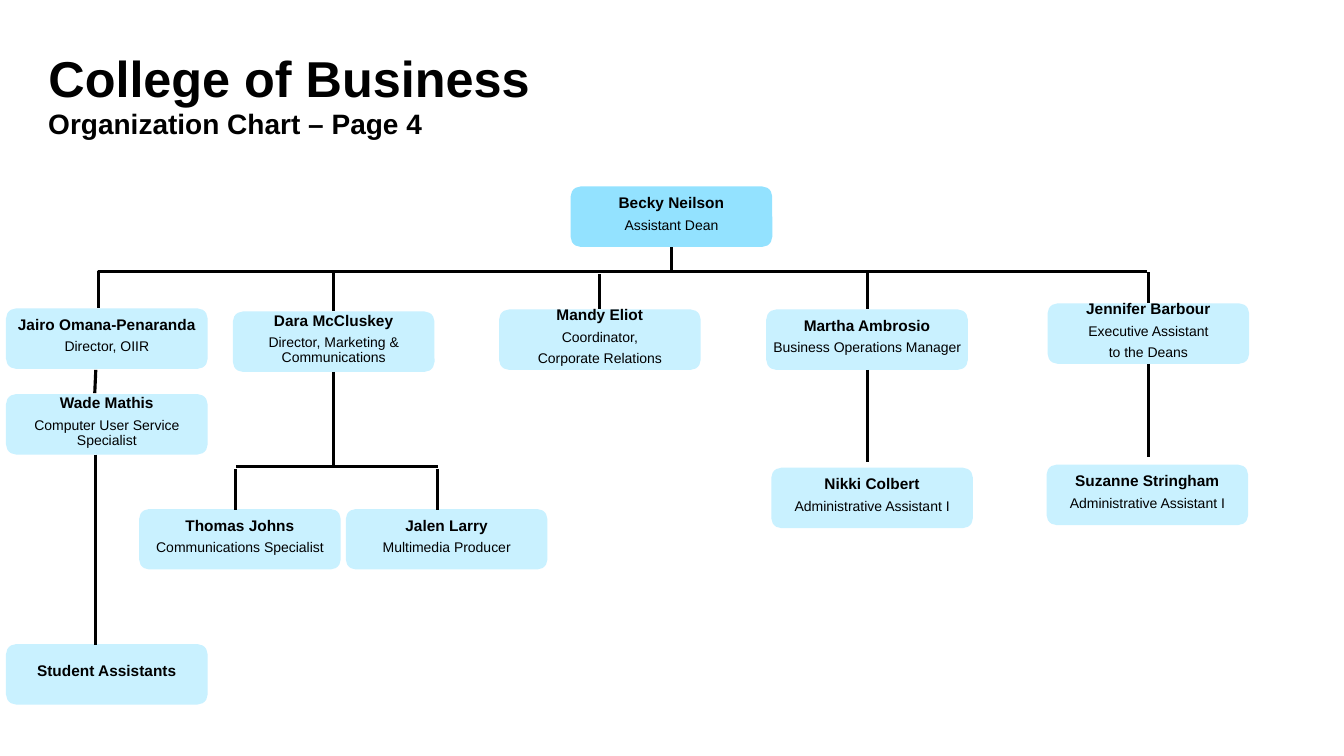
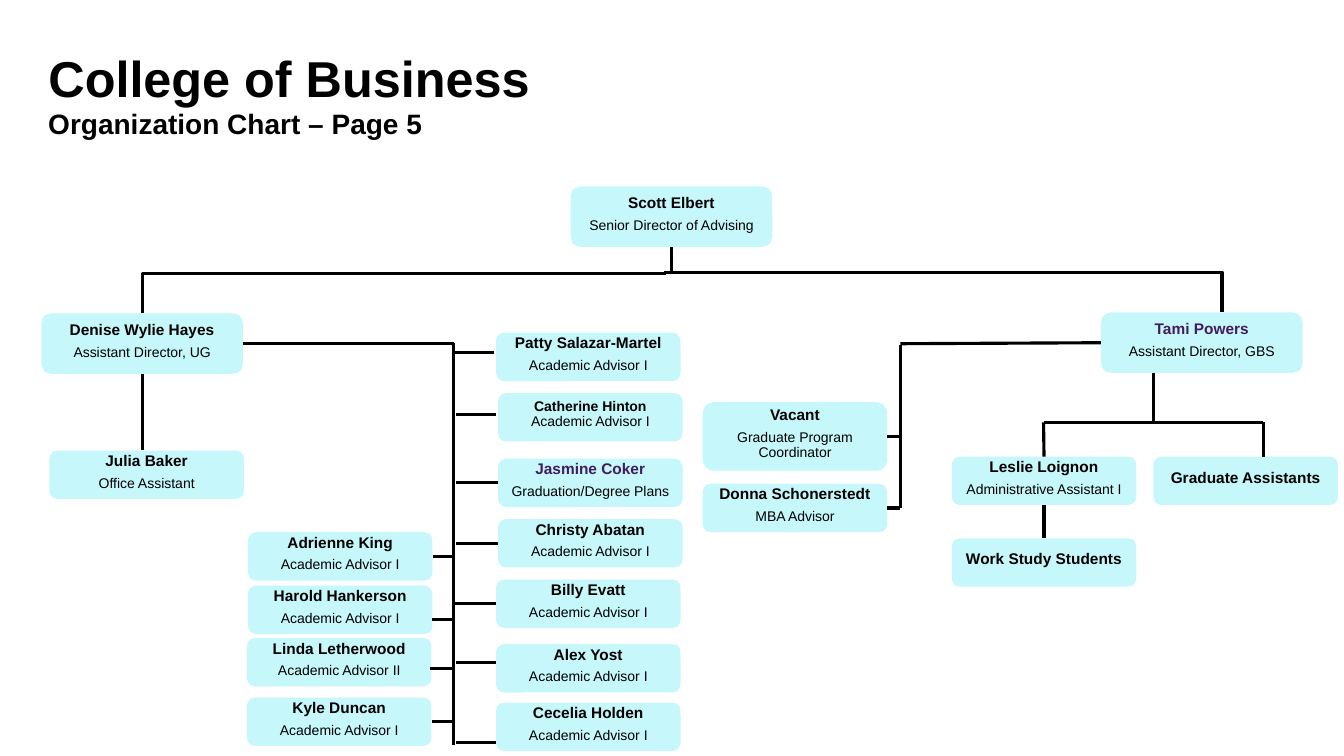
from lxml import etree
from pptx import Presentation
from pptx.dml.color import RGBColor as RGB
from pptx.enum.shapes import MSO_CONNECTOR as CXN, MSO_SHAPE as SHAPE
from pptx.enum.text import MSO_ANCHOR as ANCHOR, MSO_AUTO_SIZE as FIT, PP_ALIGN as ALIGN
from pptx.oxml.ns import qn
from pptx.util import Inches, Pt


class Theme:
    font = "Arial"
    ink, accent = RGB(0, 0, 0), RGB(0x42, 0x1C, 0x5E)
    head, staff, advising = RGB(0x93, 0xE2, 0xFF), RGB(0xC9, 0xF1, 0xFF), RGB(0xC5, 0xF7, 0xFB)
    title, subtitle, name, role = Pt(36), Pt(20), Pt(11), Pt(10)
    line = Pt(2.25)


# Box sizes and connection sites
WIDE, SMALL, TALL = (2, 0.6), (1.83, 0.48), (1.83, 0.68)
TOP, LEFT, BOTTOM, RIGHT = range(4)
ADVISOR = "Academic Advisor I"

# Boxes: name, role, left, top, size, fill. A role's line ends start paragraphs.
dean_boxes = [("Becky Neilson", "Assistant Dean", 5.66, 1.85, WIDE, Theme.head)]
dean_boxes += [(*box, WIDE, Theme.staff) for box in [
    ("Jairo Omana-Penaranda", "Director, OIIR", 0.06, 3.06),
    ("Dara McCluskey", "Director, Marketing & Communications", 2.31, 3.09),
    ("Mandy Eliot", "Coordinator,\nCorporate Relations", 4.95, 3.07),
    ("Martha Ambrosio", "Business Operations Manager", 7.6, 3.07),
    ("Jennifer Barbour", "Executive Assistant\nto the Deans", 10.39, 3.01),
    ("Wade Mathis", "Computer User Service Specialist", 0.06, 3.91),
    ("Thomas Johns", "Communications Specialist", 1.38, 5.05),
    ("Jalen Larry", "Multimedia Producer", 3.43, 5.05),
    ("Nikki Colbert", "Administrative Assistant I", 7.65, 4.64),
    ("Suzanne Stringham", "Administrative Assistant I", 10.38, 4.61),
    ("Student Assistants", "", 0.06, 6.39),
]]
advising_boxes = [(*box, Theme.advising) for box in [
    ("Scott Elbert", "Senior Director of Advising", 5.66, 1.85, WIDE),
    ("Denise Wylie Hayes", "Assistant Director, UG", 0.41, 3.11, WIDE),
    ("Tami Powers", "Assistant Director, GBS", 10.92, 3.1, WIDE),
    ("Julia Baker", "Office Assistant", 0.49, 4.47, (1.93, 0.48)),
    ("Patty Salazar-Martel", ADVISOR, 4.92, 3.3, SMALL),
    ("Catherine Hinton", ADVISOR, 4.94, 3.9, SMALL),
    ("Jasmine Coker", "Graduation/Degree Plans", 4.94, 4.55, SMALL),
    ("Christy Abatan", ADVISOR, 4.94, 5.15, SMALL),
    ("Billy Evatt", ADVISOR, 4.92, 5.75, SMALL),
    ("Alex Yost", ADVISOR, 4.92, 6.39, SMALL),
    ("Cecelia Holden", ADVISOR, 4.92, 6.97, SMALL),
    ("Adrienne King", ADVISOR, 2.46, 5.28, SMALL),
    ("Harold Hankerson", ADVISOR, 2.46, 5.81, SMALL),
    ("Linda Letherwood", "Academic Advisor II", 2.45, 6.33, SMALL),
    ("Kyle Duncan", ADVISOR, 2.45, 6.92, SMALL),
    ("Vacant", "Graduate Program Coordinator", 6.97, 3.99, TALL),
    ("Donna Schonerstedt", "MBA Advisor", 6.97, 4.8, SMALL),
    ("Leslie Loignon", "Administrative Assistant I", 9.44, 4.53, SMALL),
    ("Graduate Assistants", "", 11.44, 4.53, SMALL),
    ("Work Study Students", "", 9.44, 5.34, SMALL),
]]
accented = {"Tami Powers", "Jasmine Coker"}
one_paragraph = {"Catherine Hinton"}

# Elbows run sideways first, then down
dean_elbows = [((11.38, 2.69), (0.98, 3.06))]
advising_elbows = [((6.61, 2.71), (1.41, 3.11)), ((6.59, 2.7), (12.12, 3.1))]

# Straight lines: an end is a point, or a box name with a side
dean_lines = [
    ((6.66, 2.69), ("Becky Neilson", BOTTOM)),
    ((3.31, 2.69), ("Dara McCluskey", TOP)),
    ((5.95, 2.72), ("Mandy Eliot", TOP)),
    ((8.6, 2.7), ("Martha Ambrosio", TOP)),
    ((11.39, 2.7), ("Jennifer Barbour", TOP)),
    (("Dara McCluskey", BOTTOM), (3.31, 4.63)),
    ((2.34, 4.63), (4.34, 4.63)),
    ((2.34, 4.65), (2.34, 5.06)),
    ((4.34, 4.65), (4.34, 5.06)),
    (("Martha Ambrosio", BOTTOM), (8.6, 4.58)),
    (("Jennifer Barbour", BOTTOM), (11.39, 4.53)),
    ((0.95, 3.67), (0.94, 3.9)),
    ((0.95, 4.51), (0.95, 6.4)),
]
advising_lines = [
    ((6.66, 2.69), ("Scott Elbert", BOTTOM)),
    (("Denise Wylie Hayes", BOTTOM), (1.41, 4.46)),
    (("Denise Wylie Hayes", RIGHT), (4.5, 3.41)),
    ((4.5, 3.4), (4.5, 7.39)),
    ((4.5, 3.5), (4.9, 3.5)),
    ((4.52, 4.11), (4.92, 4.11)),
    ((4.52, 4.79), ("Jasmine Coker", LEFT)),
    ((4.52, 5.39), ("Christy Abatan", LEFT)),
    ((4.5, 5.99), ("Billy Evatt", LEFT)),
    ((4.52, 6.57), (4.92, 6.57)),
    ((4.52, 7.37), (4.92, 7.37)),
    (("Adrienne King", RIGHT), (4.5, 5.52)),
    ((4.28, 6.15), (4.5, 6.15)),
    ((4.27, 6.63), (4.5, 6.63)),
    (("Kyle Duncan", RIGHT), (4.5, 7.16)),
    (("Tami Powers", LEFT), (8.93, 3.41)),
    ((8.93, 3.42), (8.93, 5.04)),
    (("Vacant", RIGHT), (8.93, 4.33)),
    (("Donna Schonerstedt", RIGHT), (8.93, 5.04)),
    ((11.44, 3.7), (11.44, 4.19)),
    ((10.35, 4.19), (12.53, 4.19)),
    ((10.35, 4.19), ("Leslie Loignon", TOP)),
    ((12.53, 4.19), (12.53, 4.53)),
    (("Leslie Loignon", BOTTOM), ("Work Study Students", TOP)),
]


def add_run(p, text, size, bold=True, color=Theme.ink):
    r = p.add_run()
    r.text = text
    r.font.name, r.font.size, r.font.bold = Theme.font, size, bold
    r.font.color.rgb = color


def add_line(s, kind, start, end):
    cxn = s.shapes.add_connector(kind, *map(Inches, start + end))
    cxn.line.color.rgb, cxn.line.width = Theme.ink, Theme.line
    etree.SubElement(cxn._element.spPr, qn("a:effectLst"))
    return cxn


prs = Presentation()
prs.slide_width, prs.slide_height = Inches(13.33), Inches(7.5)

for page, boxes, elbows, lines in [
    (4, dean_boxes, dean_elbows, dean_lines),
    (5, advising_boxes, advising_elbows, advising_lines),
]:
    s = prs.slides.add_slide(prs.slide_layouts[5])

    # Title and subtitle
    title = s.shapes.title
    title.left, title.top, title.width, title.height = map(Inches, (0.38, 0.34, 5.73, 0.93))
    subtitle = s.shapes.add_textbox(*map(Inches, (0.38, 1.07, 3.92, 0.4)))
    for sp, text, size, spacing, anchor in [
        (title, "College of Business", Theme.title, 0.9, ANCHOR.MIDDLE),
        (subtitle, f"Organization Chart – Page {page}", Theme.subtitle, 0.8, ANCHOR.TOP),
    ]:
        tf = sp.text_frame
        tf.word_wrap, tf.auto_size, tf.vertical_anchor = True, FIT.NONE, anchor
        p = tf.paragraphs[0]
        p.alignment, p.line_spacing = ALIGN.LEFT, spacing
        add_run(p, text, size)

    # People
    people = {}
    for name, role, left, top, size, fill in boxes:
        sp = s.shapes.add_shape(SHAPE.ROUNDED_RECTANGLE, *map(Inches, (left, top, *size)))
        people[name] = sp
        sp.shadow.inherit = False
        sp.fill.solid()
        sp.fill.fore_color.rgb = fill
        sp.line.fill.background()
        tf = sp.text_frame
        tf.word_wrap, tf.vertical_anchor = True, ANCHOR.MIDDLE
        tf.margin_left = tf.margin_right = tf.margin_top = Inches(0.01)
        tf.margin_bottom = Inches(0.06)
        p = tf.paragraphs[0]
        if name in one_paragraph:
            add_run(p, name, Theme.role)
            p.add_line_break()
            add_run(p, role, Theme.role, bold=False)
        else:
            add_run(p, name, Theme.name, color=Theme.accent if name in accented else Theme.ink)
            for text in role.splitlines():
                add_run(tf.add_paragraph(), text, Theme.role, bold=False)
        for p in tf.paragraphs:
            p.alignment, p.line_spacing, p.space_after = ALIGN.CENTER, 0.9, Pt(4.3)

    # Reporting lines
    for start, end in elbows:
        cxn = add_line(s, CXN.ELBOW, start, end)
        cxn._element.spPr.find(qn("a:prstGeom")).set("prst", "bentConnector2")
    for start, end in lines:
        joins = [isinstance(tip[0], str) for tip in (start, end)]
        points = [(0, 0) if joined else tip for joined, tip in zip(joins, (start, end))]
        cxn = add_line(s, CXN.STRAIGHT, *points)
        if joins[0]:
            cxn.begin_connect(people[start[0]], start[1])
        if joins[1]:
            cxn.end_connect(people[end[0]], end[1])

prs.save("out.pptx")
